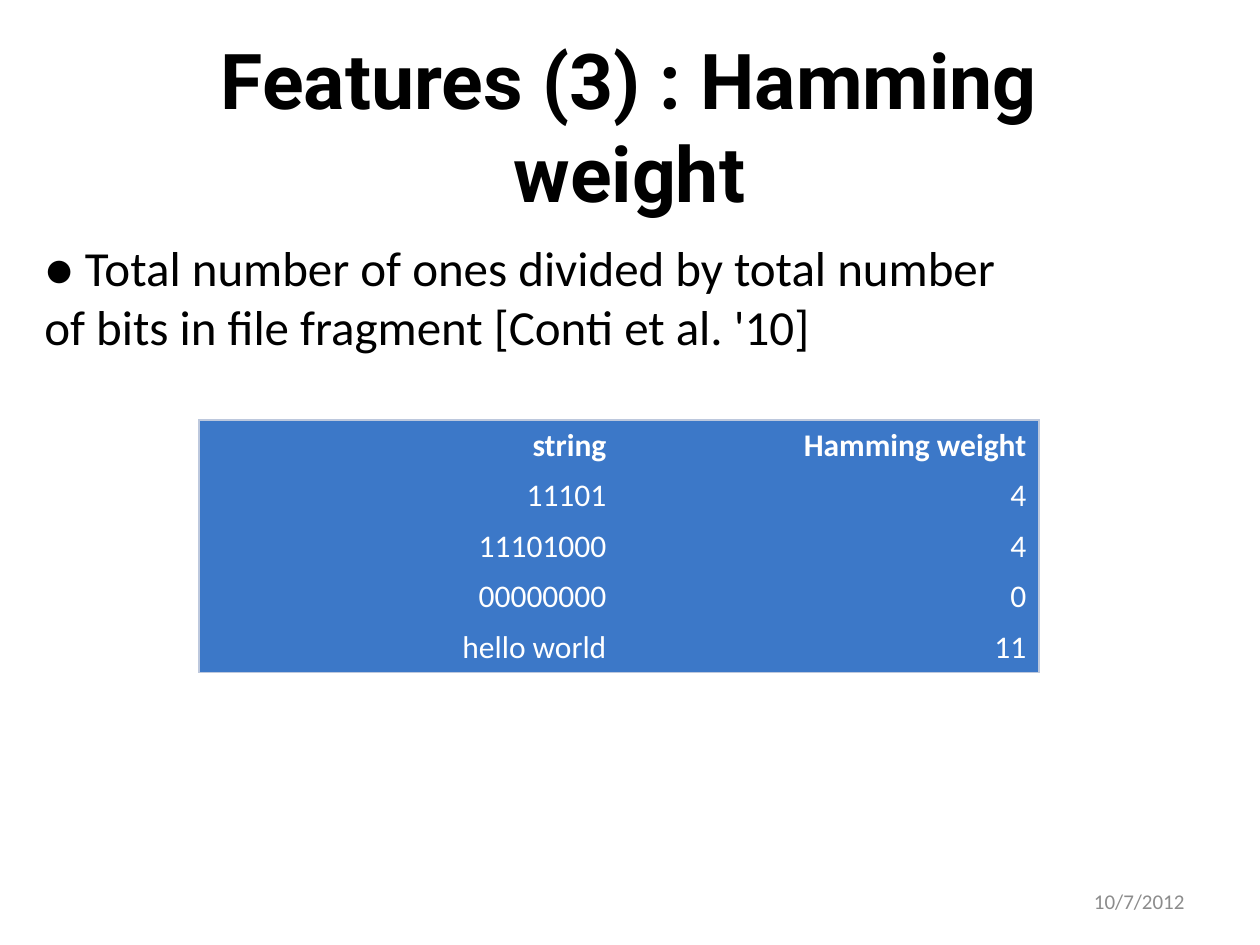
"""Build the Hamming weight slide with its definition, example table and date."""
from dataclasses import dataclass

from lxml import etree
from pptx import Presentation
from pptx import util as u
from pptx.dml.color import RGBColor
from pptx.enum import text
from pptx.oxml import parse_xml
from pptx.oxml.ns import nsdecls


@dataclass(frozen=True)
class Theme:
    ink: str = "000000"
    muted: str = "8C8C8C"
    light: str = "FFFFFF"
    fill: str = "3C78C8"
    border: str = "BDC8DD"
    shadow: str = "EEECE1"
    heading: str = "Roboto"
    body: str = "Calibri"
    title_size: int = 44
    body_size: int = 28
    table_size: int = 18
    date_size: int = 12


def px(count):
    return u.Emu(round(count * 914400 / 126))


def style(para, name, size, color, bold=False, align=text.PP_ALIGN.LEFT):
    para.alignment = align
    para.font.name = name
    para.font.size = u.Pt(size)
    para.font.bold = bold
    para.font.color.rgb = RGBColor.from_string(color)


theme = Theme()
deck = Presentation()
deck.slide_width, deck.slide_height = px(1260), px(945)
page = deck.slides.add_slide(deck.slide_layouts[5])

title = page.shapes.title
title.left, title.top, title.width, title.height = px(94), px(21), px(1071), px(158)
title.text_frame.text = "Features (3) : Hamming weight"
title.text_frame.word_wrap = True
title.text_frame.auto_size = text.MSO_AUTO_SIZE.NONE
title.text_frame.vertical_anchor = text.MSO_ANCHOR.TOP
title.text_frame.margin_top = px(12)
heading = title.text_frame.paragraphs[0]
style(heading, theme.heading, theme.title_size, theme.ink, True, text.PP_ALIGN.CENTER)
heading.runs[0].font._element.append(parse_xml(
    f'<a:effectLst {nsdecls("a")}><a:outerShdw blurRad="0" dist="38100" dir="2700000">'
    f'<a:srgbClr val="{theme.shadow}"/></a:outerShdw></a:effectLst>'))

definition = page.shapes.add_textbox(px(32), px(231), px(1228), px(190))
definition.text_frame.word_wrap = True
definition.text_frame.text = (
    "● Total number of ones divided by total number\n"
    "of bits in file fragment [Conti et al. '10]")
for para in definition.text_frame.paragraphs:
    style(para, theme.body, theme.body_size, theme.ink)

rows = [
    ("string", "Hamming weight"),
    ("11101", "4"),
    ("11101000", "4"),
    ("00000000", "0"),
    ("hello world", "11"),
]
last = len(rows) - 1
table = page.shapes.add_table(len(rows), 2, px(199), px(420), px(840), px(252)).table
table.horz_banding = False
for r, values in enumerate(rows):
    for c, value in enumerate(values):
        cell = table.cell(r, c)
        cell.text = value
        cell.vertical_anchor = text.MSO_ANCHOR.MIDDLE
        style(cell.text_frame.paragraphs[0], theme.body, theme.table_size,
              theme.light, r == 0, text.PP_ALIGN.RIGHT)
        props = cell._tc.get_or_add_tcPr()
        outer = {"lnL": c == 0, "lnR": c == 1, "lnT": r == 0, "lnB": r == last}
        for tag, visible in outer.items():
            paint = (f'<a:solidFill><a:srgbClr val="{theme.border}"/></a:solidFill>'
                     if visible else "<a:noFill/>")
            props.append(parse_xml(f'<a:{tag} {nsdecls("a")} w="9525">{paint}</a:{tag}>'))
        cell.fill.solid()
        cell.fill.fore_color.rgb = RGBColor.from_string(theme.fill)

date = page.shapes.add_textbox(px(903), px(876), px(294), px(50))
date.text_frame.word_wrap = True
date.text_frame.vertical_anchor = text.MSO_ANCHOR.MIDDLE
date.text_frame.text = "10/7/2012"
style(date.text_frame.paragraphs[0], theme.body, theme.date_size, theme.muted,
      align=text.PP_ALIGN.RIGHT)

deck.save("out.pptx")
